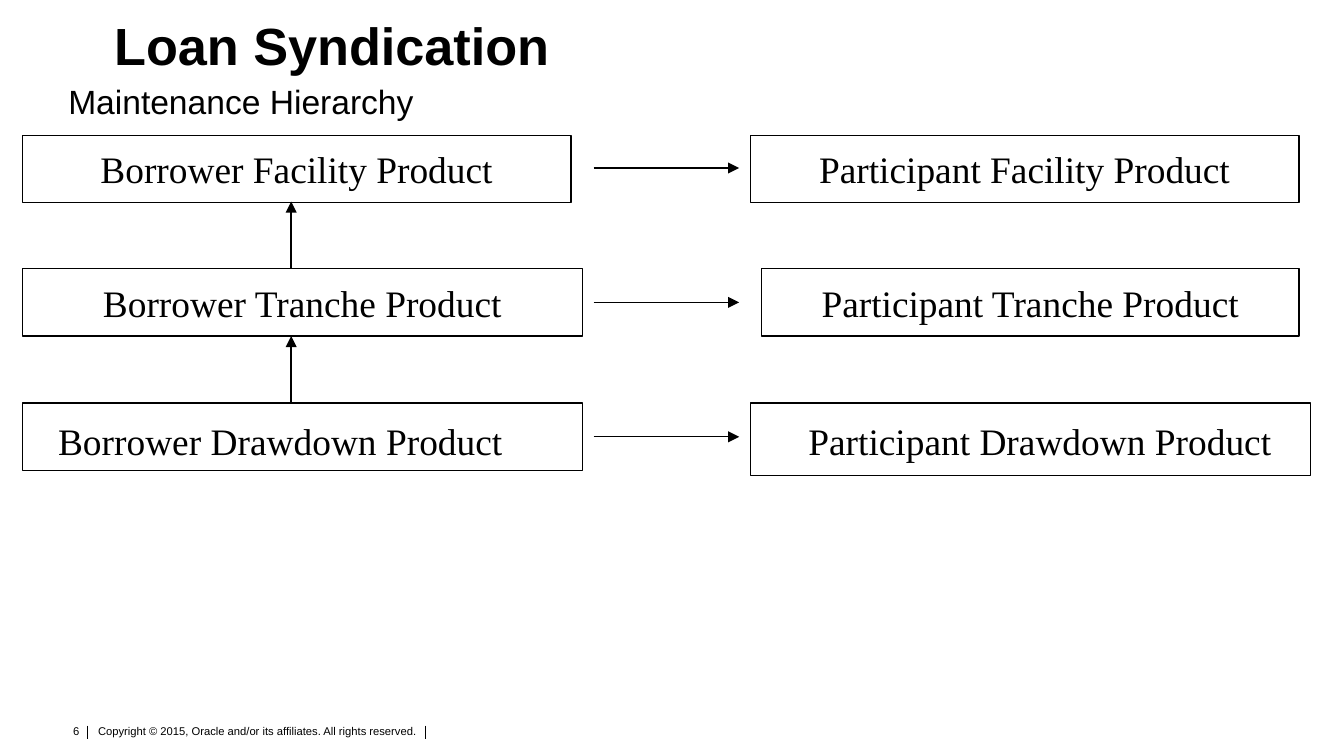
from dataclasses import dataclass

import lxml.etree
import pptx
import pptx.dml.color
import pptx.enum.shapes
import pptx.enum.text
import pptx.oxml.ns
import pptx.util

Pt = pptx.util.Pt
ALIGN = pptx.enum.text.PP_ALIGN
ANCHOR = pptx.enum.text.MSO_ANCHOR

COLOURS = {"ink": "000000", "paper": "FFFFFF"}
SANS, SERIF = "Arial", "Times New Roman"
ROW_TOPS = {"facility": 72.5, "tranche": 144, "drawdown": 216}
BOX_HEIGHT = 36
ARROW_X = 156


@dataclass
class Box:
    left: float
    top: float
    width: float
    height: float = BOX_HEIGHT
    label: str = ""


@dataclass
class Line:
    x1: float
    y1: float
    x2: float
    y2: float
    weight: float = 0.75
    arrow: bool = True


def colour(name: str) -> pptx.dml.color.RGBColor:
    return pptx.dml.color.RGBColor.from_string(COLOURS[name])


def write(shape, text: str, *, size: float, font: str = SANS, bold: bool = False,
          align=ALIGN.LEFT, anchor=ANCHOR.TOP, wrap: bool = True,
          insets: tuple = (7.2, 3.6), spacing: float = 1.0) -> None:
    """Put formatted text into a shape; insets are horizontal and vertical."""
    frame = shape.text_frame
    frame.word_wrap = wrap
    frame.vertical_anchor = anchor
    frame.margin_left = frame.margin_right = Pt(insets[0])
    frame.margin_top = frame.margin_bottom = Pt(insets[1])
    para = frame.paragraphs[0]
    para.alignment = align
    para.line_spacing = spacing
    span = para.add_run()
    span.text = text
    span.font.name = font
    span.font.size = Pt(size)
    span.font.bold = bold
    span.font.color.rgb = colour("ink")


def add_text(page, area: Box, **format_options) -> None:
    box = page.shapes.add_textbox(
        Pt(area.left), Pt(area.top), Pt(area.width), Pt(area.height))
    write(box, area.label, **format_options)


def add_box(page, area: Box) -> None:
    box = page.shapes.add_shape(
        pptx.enum.shapes.MSO_SHAPE.RECTANGLE,
        Pt(area.left), Pt(area.top), Pt(area.width), Pt(area.height))
    box.shadow.inherit = False
    box.fill.background()
    box.line.color.rgb = colour("ink")
    box.line.width = Pt(0.75)
    if area.label:
        write(box, area.label, size=20, font=SERIF, align=ALIGN.CENTER,
              anchor=ANCHOR.MIDDLE, wrap=False)


def add_line(page, line: Line) -> None:
    connector = page.shapes.add_connector(
        pptx.enum.shapes.MSO_CONNECTOR.STRAIGHT,
        Pt(line.x1), Pt(line.y1), Pt(line.x2), Pt(line.y2))
    connector.line.color.rgb = colour("ink")
    connector.line.width = Pt(line.weight)
    if line.arrow:
        lxml.etree.SubElement(connector.line._get_or_add_ln(),
                              pptx.oxml.ns.qn("a:tailEnd"), type="triangle")
    lxml.etree.SubElement(connector._element.spPr, pptx.oxml.ns.qn("a:effectLst"))


def main() -> None:
    deck = pptx.Presentation()
    deck.slide_width, deck.slide_height = Pt(720), Pt(405)
    page = deck.slides.add_slide(deck.slide_layouts[6])
    page.background.fill.solid()
    page.background.fill.fore_color.rgb = colour("paper")

    # Footer
    add_text(page, Box(49.7, 386.6, 197.3, 17.3,
                       "Copyright © 2015, Oracle and/or its affiliates. All rights reserved."),
             size=6, insets=(2.9, 1.44))
    for x in (47, 228):
        add_line(page, Line(x, 388.8, x, 396, weight=0.5, arrow=False))
    add_text(page, Box(28.1, 384.5, 21.6, 14.4, "6"),
             size=6, align=ALIGN.RIGHT, wrap=False)

    # Headings
    add_text(page, Box(61.2, 10.8, 606, 38.2, "Loan Syndication"),
             size=28, bold=True, insets=(0, 0), spacing=0.9)
    add_text(page, Box(29.5, 39.6, 201.6, 28.8, "Maintenance Hierarchy"),
             size=18, wrap=False)

    # Product boxes
    facility, tranche, drawdown = ROW_TOPS.values()
    for area in (
        Box(12, facility, 294, label="Borrower Facility Product"),
        Box(402, facility, 294, label="Participant Facility Product"),
        Box(12, tranche, 300, label="Borrower Tranche Product"),
        Box(408, tranche, 288, label="Participant Tranche Product"),
        Box(12, drawdown, 300),
        Box(402, drawdown, 300, 38.9),
    ):
        add_box(page, area)

    # Drawdown labels sit apart from their boxes
    for area in (
        Box(24, 220.5, 276, 31.5, "Borrower Drawdown Product"),
        Box(426, 220.5, 270, 31.5, "Participant Drawdown Product"),
    ):
        add_text(page, area, size=20, font=SERIF)

    # Arrows up the hierarchy, then from borrower to participant
    for top in (tranche, drawdown):
        add_line(page, Line(ARROW_X, top, ARROW_X, top - BOX_HEIGHT))
    for y in (90, 162, 234):
        add_line(page, Line(318, y, 396, y))

    deck.save("out.pptx")


if __name__ == "__main__":
    main()
